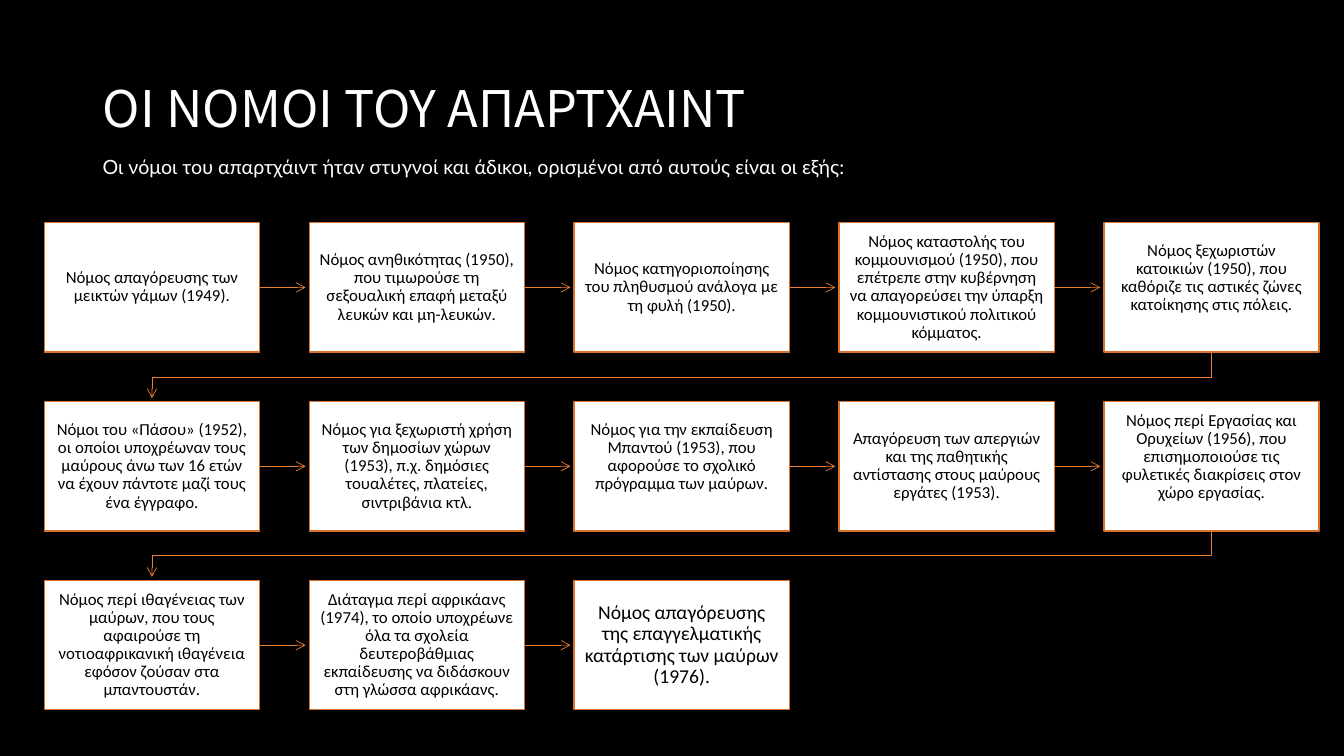
from pptx import Presentation
from pptx.dml.color import RGBColor
from pptx.enum.shapes import MSO_CONNECTOR, MSO_SHAPE
from pptx.enum.text import MSO_ANCHOR, MSO_AUTO_SIZE, PP_ALIGN
from pptx.oxml.ns import qn
from pptx.util import Inches, Pt
from lxml import etree

RECTANGLE = MSO_SHAPE.RECTANGLE
STRAIGHT = MSO_CONNECTOR.STRAIGHT
MIDDLE = MSO_ANCHOR.MIDDLE
NO_AUTOFIT = MSO_AUTO_SIZE.NONE
LEFT, CENTER = PP_ALIGN.LEFT, PP_ALIGN.CENTER
RIGHT_SIDE = 3
TITLE_ONLY = 5

COLUMNS = 5
LAWS = [
    "Νόμος απαγόρευσης των μεικτών γάμων (1949).",
    "Νόμος ανηθικότητας (1950), που τιμωρούσε τη σεξουαλική επαφή μεταξύ λευκών και μη-λευκών.",
    "Νόμος κατηγοριοποίησης του πληθυσμού ανάλογα με τη φυλή (1950).",
    "Νόμος καταστολής του κομμουνισμού (1950), που επέτρεπε στην κυβέρνηση να απαγορεύσει "
    "την ύπαρξη κομμουνιστικού πολιτικού κόμματος.",
    "Νόμος ξεχωριστών κατοικιών (1950), που καθόριζε τις αστικές ζώνες κατοίκησης στις πόλεις.",
    "Νόμοι του «Πάσου» (1952), οι οποίοι υποχρέωναν τους μαύρους άνω των 16 ετών "
    "να έχουν πάντοτε μαζί τους ένα έγγραφο.",
    "Νόμος για ξεχωριστή χρήση των δημοσίων χώρων (1953), π.χ. δημόσιες τουαλέτες, "
    "πλατείες, σιντριβάνια κτλ.",
    "Νόμος για την εκπαίδευση Μπαντού (1953), που αφορούσε το σχολικό πρόγραμμα των μαύρων.",
    "Απαγόρευση των απεργιών και της παθητικής αντίστασης στους μαύρους εργάτες (1953).",
    "Νόμος περί Εργασίας και Ορυχείων (1956), που επισημοποιούσε τις φυλετικές διακρίσεις "
    "στον χώρο εργασίας.",
    "Νόμος περί ιθαγένειας των μαύρων, που τους αφαιρούσε τη νοτιοαφρικανική ιθαγένεια "
    "εφόσον ζούσαν στα μπαντουστάν.",
    "Διάταγμα περί αφρικάανς (1974), το οποίο υποχρέωνε όλα τα σχολεία δευτεροβάθμιας "
    "εκπαίδευσης να διδάσκουν στη γλώσσα αφρικάανς.",
    "Νόμος απαγόρευσης της επαγγελματικής κατάρτισης των μαύρων (1976).",
]
RAISED_LAWS = {4, 7, 9}
LAST_LAW = len(LAWS) - 1


def color(value):
    return RGBColor.from_string(value)


class LawFlow:
    background, foreground, ink = "000000", "FFFFFF", "000000"
    border, arrow = "D7712B", "ED7D31"
    title_font, intro_font, box_font = "Noto Sans CJK JP", "Lato", "Calibri"
    left, column_pitch, box_width = 3.3, 19.71, 16.02
    top, row_pitch, box_height = 29.47, 23.66, 17.1
    arrow_length, turn_drop, tip_drop = 3.42, 3.3, 6.1

    def __init__(self, presentation):
        self.width, self.height = presentation.slide_width, presentation.slide_height
        self.slide = presentation.slides.add_slide(presentation.slide_layouts[TITLE_ONLY])
        fill = self.slide.background.fill
        fill.solid()
        fill.fore_color.rgb = color(self.background)

    def across(self, percent):
        return round(self.width * percent / 100)

    def down(self, percent):
        return round(self.height * percent / 100)

    def area(self, left, top, width, height):
        return self.across(left), self.down(top), self.across(width), self.down(height)

    def set_text(self, shape, text, font, size, ink, alignment):
        frame = shape.text_frame
        frame.word_wrap = True
        frame.auto_size = NO_AUTOFIT
        frame.text = text
        paragraph = frame.paragraphs[0]
        paragraph.alignment = alignment
        run_font = paragraph.runs[0].font
        run_font.name, run_font.size = font, Pt(size)
        run_font.color.rgb = color(ink)
        return frame, paragraph

    def title(self, text):
        shape = self.slide.shapes.title
        shape.left, shape.top, shape.width, shape.height = self.area(6.9, 5.1, 86.25, 19.3)
        frame, paragraph = self.set_text(shape, text, self.title_font, 36, self.foreground, LEFT)
        frame.vertical_anchor = MIDDLE
        paragraph.line_spacing = 0.9

    def intro(self, text):
        shape = self.slide.shapes.add_textbox(*self.area(6.9, 19.87, 84.4, 4.5))
        self.set_text(shape, text, self.intro_font, 14, self.foreground, LEFT)

    def box(self, column, row, text, size, raised):
        shape = self.slide.shapes.add_shape(RECTANGLE, *self.area(
            self.left + column * self.column_pitch, self.top + row * self.row_pitch,
            self.box_width, self.box_height))
        shape.shadow.inherit = False
        shape.fill.solid()
        shape.fill.fore_color.rgb = color(self.foreground)
        shape.line.color.rgb = color(self.border)
        shape.line.width = Pt(1)
        frame, paragraph = self.set_text(shape, text, self.box_font, size, self.ink, CENTER)
        frame.vertical_anchor = MIDDLE
        inset = Inches(size * 0.0075)
        frame.margin_left = frame.margin_right = frame.margin_top = inset
        frame.margin_bottom = inset + Pt(13) if raised else inset
        paragraph.line_spacing = 0.9
        paragraph.space_after = Pt(round(size * 0.42))
        return shape

    def arrow_line(self, shape):
        shape.line.color.rgb = color(self.arrow)
        shape.line.width = Pt(0.5)
        outline = shape.element.spPr.find(qn("a:ln"))
        etree.SubElement(outline, qn("a:tailEnd"), type="arrow")

    def arrow_right(self, box):
        start = box.left + box.width
        middle = box.top + box.height // 2
        connector = self.slide.shapes.add_connector(
            STRAIGHT, start, middle, start + self.across(self.arrow_length), middle)
        connector.begin_connect(box, RIGHT_SIDE)
        self.arrow_line(connector)
        etree.SubElement(connector.element.spPr, qn("a:effectLst"))

    def arrow_to_next_row(self, last_box, first_box):
        start = last_box.left + last_box.width // 2
        end = first_box.left + first_box.width // 2
        bottom = last_box.top + last_box.height
        turn = bottom + self.down(self.turn_drop)
        tip = bottom + self.down(self.tip_drop)
        builder = self.slide.shapes.build_freeform(start, bottom)
        builder.add_line_segments([(start, turn), (end, turn), (end, tip)], close=False)
        shape = builder.convert_to_shape()
        shape.shadow.inherit = False
        shape.fill.background()
        self.arrow_line(shape)


def main():
    presentation = Presentation()
    presentation.slide_width, presentation.slide_height = Inches(13.33), Inches(7.5)
    flow = LawFlow(presentation)
    flow.title("ΟΙ ΝΟΜΟΙ ΤΟΥ ΑΠΑΡΤΧΑΙΝΤ")
    flow.intro("Οι νόμοι του απαρτχάιντ ήταν στυγνοί και άδικοι, ορισμένοι από αυτούς είναι οι εξής:")
    boxes = []
    for index, law in enumerate(LAWS):
        row, column = divmod(index, COLUMNS)
        size = 14 if index == LAST_LAW else 12
        boxes.append(flow.box(column, row, law, size, index in RAISED_LAWS))
    for index, box in enumerate(boxes[:-1]):
        if (index + 1) % COLUMNS:
            flow.arrow_right(box)
        else:
            flow.arrow_to_next_row(box, boxes[index + 1])
    presentation.save("out.pptx")


if __name__ == "__main__":
    main()
